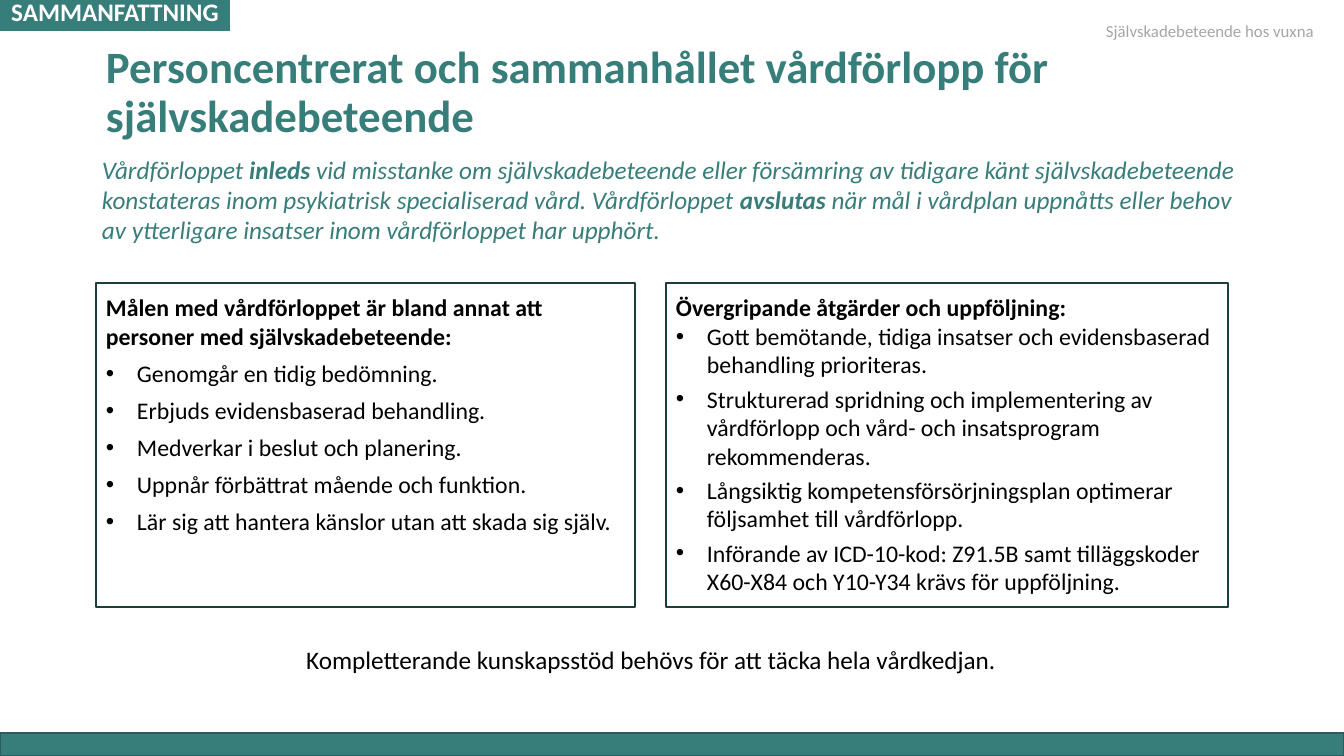
from dataclasses import dataclass

from lxml import etree
from pptx import Presentation
from pptx import util as u
from pptx.dml.color import RGBColor
from pptx.enum import shapes, text
from pptx.oxml.ns import qn

SCALE = 12192000 / 1344  # EMU per px


@dataclass(frozen=True)
class Theme:
    font: str = "Calibri"
    teal: str = "377D7A"
    edge: str = "295C5A"
    frame: str = "1C3E3D"
    white: str = "FFFFFF"
    black: str = "000000"
    grey: str = "A6A6A6"
    title: float = 32
    body: float = 18
    list: float = 17
    note: float = 12


T = Theme()
LEFT, MID = text.PP_ALIGN.LEFT, text.PP_ALIGN.CENTER
TOP, CENTRE, BASE = (text.MSO_ANCHOR.TOP, text.MSO_ANCHOR.MIDDLE,
                     text.MSO_ANCHOR.BOTTOM)


def px(n):
    return u.Emu(round(n * SCALE))


def rgb(code):
    return RGBColor.from_string(code)


def add_run(para, words, size, tint, bold=False, italic=False):
    run = para.add_run()
    run.text = words
    font = run.font
    font.name, font.size = T.font, u.Pt(size)
    font.bold, font.italic = bold, italic
    font.color.rgb = rgb(tint)


def set_frame(shape, wrap=True, anchor=TOP, top=5):
    frame = shape.text_frame
    frame.word_wrap = wrap
    frame.vertical_anchor = anchor
    frame.margin_left = frame.margin_right = px(10)
    frame.margin_top, frame.margin_bottom = px(top), px(5)
    return frame


def next_para(frame, first, align=LEFT):
    para = frame.paragraphs[0] if first else frame.add_paragraph()
    para.alignment = align
    return para


def add_rect(slide, box, fill, line=None):
    rect = slide.shapes.add_shape(shapes.MSO_SHAPE.RECTANGLE, *map(px, box))
    rect.shadow.inherit = False
    rect.fill.solid()
    rect.fill.fore_color.rgb = rgb(fill)
    if line:
        rect.line.color.rgb = rgb(line)
        rect.line.width = u.Pt(1)
    else:
        rect.line.fill.background()
    return rect


def add_text(slide, box, words, size, tint, bold=False, align=LEFT,
             anchor=TOP, space=None):
    label = slide.shapes.add_textbox(*map(px, box))
    para = next_para(set_frame(label, anchor=anchor), True, align)
    para.line_spacing = space
    add_run(para, words, size, tint, bold)


def add_intro(slide, box, parts):
    """Italic paragraph in which every second part is bold."""
    frame = set_frame(slide.shapes.add_textbox(*map(px, box)))
    for i, words in enumerate(parts):
        add_run(frame.paragraphs[0], words, T.body, T.teal, i % 2 == 1, True)


def add_bullet(para):
    props = para._p.get_or_add_pPr()
    props.set("marL", str(px(31)))
    props.set("indent", str(-px(31)))
    etree.SubElement(props, qn("a:buFont")).set("typeface", "Arial")
    etree.SubElement(props, qn("a:buChar")).set("char", "•")


def add_panel(slide, box, head, items, before=0, after=0):
    rect = add_rect(slide, box, T.white, T.frame)
    frame = set_frame(rect, top=10)
    add_run(next_para(frame, True), head, T.list, T.black, True)
    for item in items:
        para = next_para(frame, False)
        add_bullet(para)
        para.space_before, para.space_after = u.Pt(before), u.Pt(after)
        add_run(para, item, T.list, T.black)


def add_tag(slide, box, words):
    frame = set_frame(add_rect(slide, box, T.teal), False, CENTRE)
    add_run(next_para(frame, True, MID), words, T.body, T.white, True)


def main():
    deck = Presentation()
    deck.slide_width, deck.slide_height = px(1344), px(756)
    slide = deck.slides.add_slide(deck.slide_layouts[6])

    add_rect(slide, (0, 733, 1344, 23), T.teal, T.edge)
    add_text(slide, (96, 80, 1171, 67),
             "Personcentrerat och sammanhållet vårdförlopp för "
             "självskadebeteende",
             T.title, T.teal, True, anchor=BASE, space=0.9)
    add_panel(slide, (96, 283, 539, 324),
              "Målen med vårdförloppet är bland annat att personer med "
              "självskadebeteende:",
              ["Genomgår en tidig bedömning.",
               "Erbjuds evidensbaserad behandling.",
               "Medverkar i beslut och planering.",
               "Uppnår förbättrat mående och funktion.",
               "Lär sig att hantera känslor utan att skada sig själv."],
              before=6)
    add_panel(slide, (666, 283, 562, 324),
              "Övergripande åtgärder och uppföljning:",
              ["Gott bemötande, tidiga insatser och evidensbaserad "
               "behandling prioriteras.",
               "Strukturerad spridning och implementering av vårdförlopp "
               "och vård- och insatsprogram rekommenderas.",
               "Långsiktig kompetensförsörjningsplan optimerar följsamhet "
               "till vårdförlopp.",
               "Införande av ICD-10-kod: Z91.5B samt tilläggskoder X60-X84 "
               "och Y10-Y34 krävs för uppföljning."],
              after=4)
    add_intro(slide, (92, 149, 1159, 102),
              ["Vårdförloppet ", "inleds ",
               "vid misstanke om självskadebeteende eller försämring av "
               "tidigare känt självskadebeteende konstateras inom "
               "psykiatrisk specialiserad vård. Vårdförloppet ",
               "avslutas",
               " när mål i vårdplan uppnåtts eller behov av ytterligare "
               "insatser inom vårdförloppet har upphört."])
    add_tag(slide, (0, -9, 230, 40), "SAMMANFATTNING")
    add_text(slide, (1096, 16, 238, 30), "Självskadebeteende hos vuxna",
             T.note, T.grey)
    add_text(slide, (254, 639, 794, 40),
             "Kompletterande kunskapsstöd behövs för att täcka hela "
             "vårdkedjan.",
             T.body, T.black, align=MID)
    deck.save("out.pptx")


if __name__ == "__main__":
    main()
